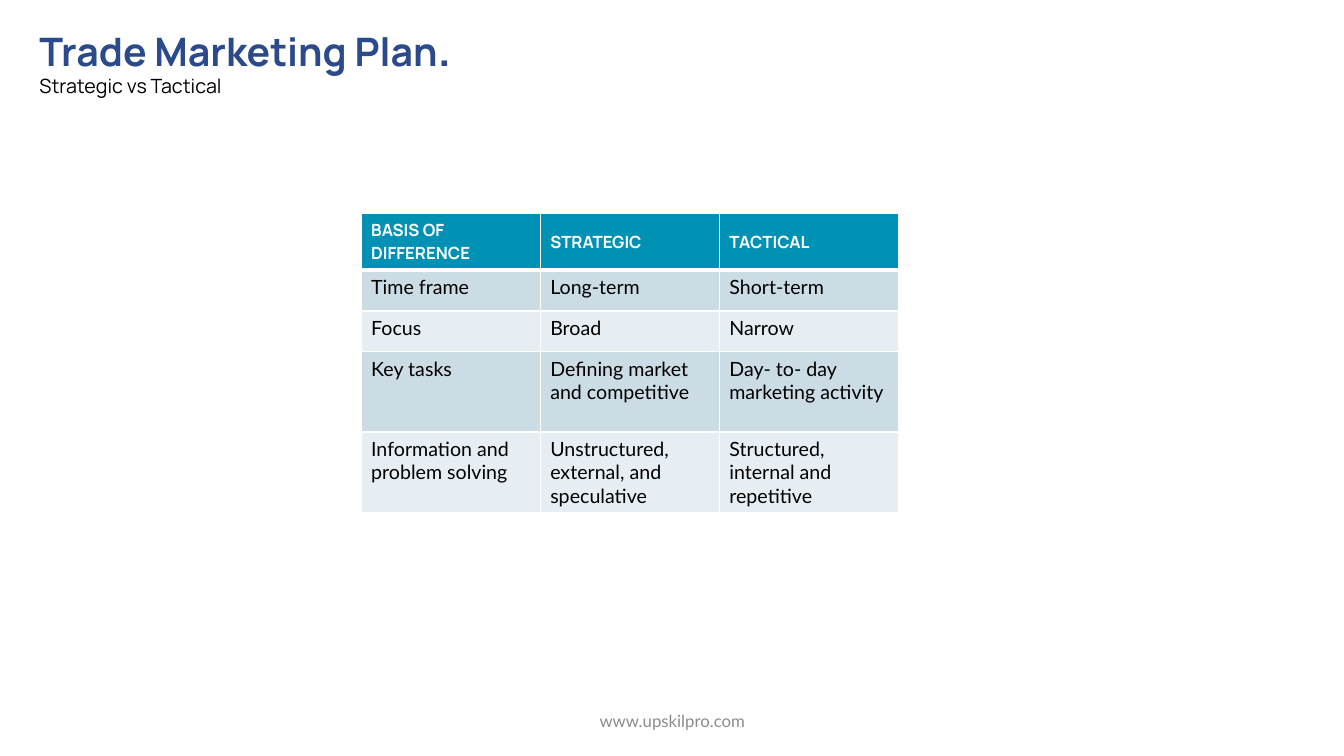
from dataclasses import dataclass

from lxml import etree
from pptx import Presentation
from pptx.dml.color import RGBColor
from pptx.enum.text import MSO_ANCHOR, MSO_AUTO_SIZE, PP_ALIGN
from pptx.oxml.ns import qn
from pptx.util import Cm, Pt

TOP, MID = MSO_ANCHOR.TOP, MSO_ANCHOR.MIDDLE
CENTER, LEFT = PP_ALIGN.CENTER, PP_ALIGN.LEFT
FIXED = MSO_AUTO_SIZE.NONE
WHITE, BLACK, NAVY, TEAL, GREY = "FFFFFF", "000000", "2A4A8B", "0091B5", "8C8C8C"
BANDS = ("CCDCE5", "E7EEF3")


@dataclass
class Style:
    font: str
    size: float
    color: str
    bold: bool = False


@dataclass
class Row:
    height: float
    cells: tuple[str, str, str]


HEAD = Style("Manrope", 12, WHITE, True)
BODY = Style("Lato", 14, BLACK)
ROWS = [
    Row(1.37, ("BASIS OF DIFFERENCE", "STRATEGIC", "TACTICAL")),
    Row(1.03, ("Time frame", "Long-term", "Short-term")),
    Row(1.03, ("Focus", "Broad", "Narrow")),
    Row(2.02, ("Key tasks", "Defining market and competitive",
               "Day- to- day marketing activity")),
    Row(2.02, ("Information and problem solving",
               "Unstructured, external, and speculative",
               "Structured, internal and repetitive")),
]


def paint(fill, color: str) -> None:
    fill.solid()
    fill.fore_color.rgb = RGBColor.from_string(color)


def style(run, look: Style) -> None:
    font = run.font
    font.name, font.size, font.bold = look.font, Pt(look.size), look.bold
    font.color.rgb = RGBColor.from_string(look.color)


def border(cell, below: float) -> None:
    """Draw white cell borders; they must come before the cell's fill."""
    props = cell._tc.get_or_add_tcPr()
    for i, (side, width) in enumerate(
            [("lnL", 1), ("lnR", 1), ("lnT", 1), ("lnB", below)]):
        line = etree.Element(qn(f"a:{side}"), w=str(Pt(width)))
        solid = etree.SubElement(line, qn("a:solidFill"))
        etree.SubElement(solid, qn("a:srgbClr"), val=WHITE)
        props.insert(i, line)


def add_title(slide) -> None:
    title = slide.shapes.title
    title.left, title.top, title.width, title.height = (
        Cm(0.74), Cm(0.58), Cm(27.94), Cm(2.24))
    paint(title.fill, WHITE)
    frame = title.text_frame
    frame.word_wrap, frame.auto_size = True, FIXED
    frame.vertical_anchor = TOP
    frame.text = "Trade Marketing Plan\nStrategic vs Tactical"
    head, sub = frame.paragraphs
    dot = head.add_run()
    dot.text = "."
    style(head.runs[0], Style("Manrope", 28, NAVY, True))
    style(dot, Style("Manrope", 32, NAVY, True))
    style(sub.runs[0], Style("Manrope", 14, BLACK))
    for para in frame.paragraphs:
        para.alignment, para.line_spacing = LEFT, 0.9


def add_grid(slide) -> None:
    high = sum(row.height for row in ROWS)
    table = slide.shapes.add_table(
        len(ROWS), 3, Cm(9.1), Cm(5.39), Cm(13.54), Cm(high)).table
    for r, row in enumerate(ROWS):
        table.rows[r].height = Cm(row.height)
        for c, text in enumerate(row.cells):
            cell = table.cell(r, c)
            cell.text = text
            cell.vertical_anchor = TOP if r else MID
            style(cell.text_frame.paragraphs[0].runs[0], BODY if r else HEAD)
            paint(cell.fill, BANDS[(r - 1) % 2] if r else TEAL)
            border(cell, 1 if r else 3)
            if r == 1:
                cell._tc.tcPr.find(qn("a:lnT")).set("w", str(Pt(3)))


def add_foot(slide) -> None:
    box = slide.shapes.add_textbox(Cm(11.23), Cm(17.65), Cm(11.43), Cm(1.02))
    frame = box.text_frame
    frame.word_wrap, frame.vertical_anchor = True, MID
    frame.text = "www.upskilpro.com"
    para = frame.paragraphs[0]
    para.alignment = CENTER
    style(para.runs[0], Style("Lato", 12, GREY))


def main() -> None:
    deck = Presentation()
    deck.slide_width, deck.slide_height = Cm(33.87), Cm(19.05)
    slide = deck.slides.add_slide(deck.slide_layouts[5])
    paint(slide.background.fill, WHITE)
    # Heading, comparison table, web address
    add_title(slide)
    add_grid(slide)
    add_foot(slide)
    deck.save("out.pptx")


if __name__ == "__main__":
    main()
